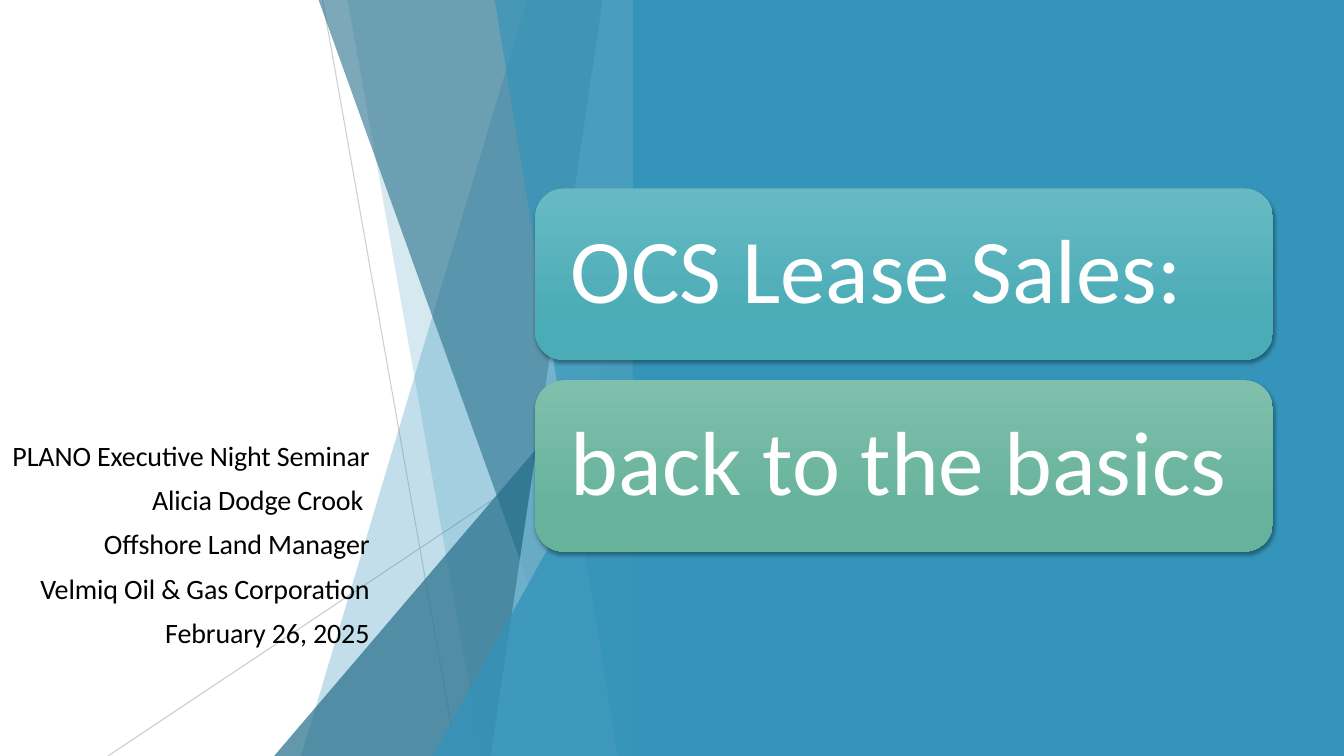
import pptx
import pptx.util
import pptx.dml.color
import pptx.enum.shapes
import pptx.enum.text
import pptx.oxml
import pptx.oxml.ns

Cm, Pt = pptx.util.Cm, pptx.util.Pt
RGB = pptx.dml.color.RGBColor
SHAPE = pptx.enum.shapes.MSO_SHAPE
ALIGN = pptx.enum.text.PP_ALIGN
qn = pptx.oxml.ns.qn

BLUE, NAVY, SKY = RGB(0x34, 0x94, 0xBA), RGB(0x27, 0x6F, 0x8B), RGB(0x7F, 0xC1, 0xDB)
GREY, WHITE, BLACK = RGB(0xBF, 0xBF, 0xBF), RGB(255, 255, 255), RGB(0, 0, 0)
TEAL = (RGB(0x67, 0xBA, 0xC3), RGB(0x4A, 0xAC, 0xB6))
GREEN = (RGB(0x7F, 0xC0, 0xAC), RGB(0x66, 0xB2, 0x9B))

# Content
CARDS = [("OCS Lease Sales:", TEAL), ("back to the basics", GREEN)]
SPEAKER = [
    "PLANO Executive Night Seminar",
    "Alicia Dodge Crook ",
    "Offshore Land Manager",
    "Velmiq Oil & Gas Corporation",
    "February 26, 2025",
]

# Backdrop, in cm: all facets end at the left edge of the blue panel
WIDTH, HEIGHT, PANEL = 33.87, 19.05, 15.95
RULES = [(8.13, 0, 11.51, HEIGHT, 75), (PANEL, 10.24, 2.72, HEIGHT, 80)]
FACETS = [  # band: top x, bottom x; peak: left, top; then colour, opacity
    ("band", 13.28, 7.59, BLUE, 30),
    ("band", 8.76, 12.14, BLUE, 20),
    ("peak", 6.91, 8.46, NAVY, 72),
    ("band", 8.03, 14.88, NAVY, 60),
    ("band", 15.19, 12.37, SKY, 70),
    ("band", 12.47, 15.57, BLUE, 65),
    ("peak", 10.9, 9.98, BLUE, 80),
]
CARD_LEFT, CARD_TOP, CARD_W, CARD_H, CARD_STEP = 13.49, 4.75, 18.59, 4.32, 4.83


def set_opacity(sp, percent):
    clr = next(sp._element.spPr.iter(qn("a:srgbClr")))
    clr.append(pptx.oxml.parse_xml(
        f'<a:alpha {pptx.oxml.ns.nsdecls("a")} val="{percent * 1000}"/>'))


def set_effects(sp, effects=""):
    sp._element.spPr.append(pptx.oxml.parse_xml(
        f'<a:effectLst {pptx.oxml.ns.nsdecls("a")}>{effects}</a:effectLst>'))


def write(sp, lines, size, color, align, before=0, spacing=None, inset=None):
    tf = sp.text_frame
    tf.word_wrap = True
    tf.vertical_anchor = pptx.enum.text.MSO_ANCHOR.MIDDLE
    if inset is not None:
        tf.margin_left = tf.margin_right = tf.margin_top = tf.margin_bottom = Cm(inset)
    for i, line in enumerate(lines):
        p = tf.paragraphs[0] if i == 0 else tf.add_paragraph()
        p.alignment, p.line_spacing = align, 0.9
        if i and before:
            p.space_before = Pt(before)
        r = p.add_run()
        r.text = line
        r.font.name, r.font.size, r.font.color.rgb = "Calibri", Pt(size), color
        if spacing is not None:
            r._r.get_or_add_rPr().set("spc", str(spacing))


prs = pptx.Presentation()
prs.slide_width, prs.slide_height = Cm(WIDTH), Cm(HEIGHT)
s = prs.slides.add_slide(prs.slide_layouts[6])

# Thin rules
for x1, y1, x2, y2, opacity in RULES:
    line = s.shapes.add_connector(
        pptx.enum.shapes.MSO_CONNECTOR.STRAIGHT, Cm(x1), Cm(y1), Cm(x2), Cm(y2))
    line.line.color.rgb, line.line.width = GREY, Pt(0.75)
    set_opacity(line, opacity)
    set_effects(line)

# Translucent facets
for kind, a, b, color, opacity in FACETS:
    if kind == "band":
        outline = s.shapes.build_freeform(Cm(a), 0)
        outline.add_line_segments(
            [(Cm(PANEL), 0), (Cm(PANEL), Cm(HEIGHT)), (Cm(b), Cm(HEIGHT))], close=True)
        sp = outline.convert_to_shape()
    else:
        sp = s.shapes.add_shape(SHAPE.ISOSCELES_TRIANGLE, Cm(a), Cm(b),
                                Cm(PANEL - a), Cm(HEIGHT - b))
        sp.adjustments[0] = 1
    sp.fill.solid()
    sp.fill.fore_color.rgb = color
    set_opacity(sp, opacity)
    sp.line.fill.background()
    sp.shadow.inherit = False

# Blue panel
panel = s.shapes.add_shape(SHAPE.RECTANGLE, Cm(PANEL), 0, Cm(WIDTH - PANEL), Cm(HEIGHT))
panel.fill.solid()
panel.fill.fore_color.rgb = BLUE
panel.line.fill.background()
panel.shadow.inherit = False

# Speaker details
box = s.shapes.add_textbox(Cm(-1.24), Cm(7.75), Cm(10.8), Cm(12.01))
write(box, SPEAKER, 20, BLACK, ALIGN.RIGHT, before=10, spacing=-10)

# Title cards
for i, (text, colors) in enumerate(CARDS):
    card = s.shapes.add_shape(SHAPE.ROUNDED_RECTANGLE, Cm(CARD_LEFT),
                              Cm(CARD_TOP + i * CARD_STEP), Cm(CARD_W), Cm(CARD_H))
    card.fill.gradient()
    card.fill.gradient_angle = 270
    for stop, position, color in zip(card.fill.gradient_stops, (0, 0.78), colors):
        stop.position, stop.color.rgb = position, color
    card.line.fill.background()
    set_effects(card, f'<a:outerShdw blurRad="{Pt(3)}" dist="{Pt(2)}" dir="5400000" '
                      'rotWithShape="0"><a:srgbClr val="000000"><a:alpha val="35000"/>'
                      '</a:srgbClr></a:outerShdw>')
    write(card, [text], 65, WHITE, ALIGN.LEFT, inset=0.69)

prs.save("out.pptx")
